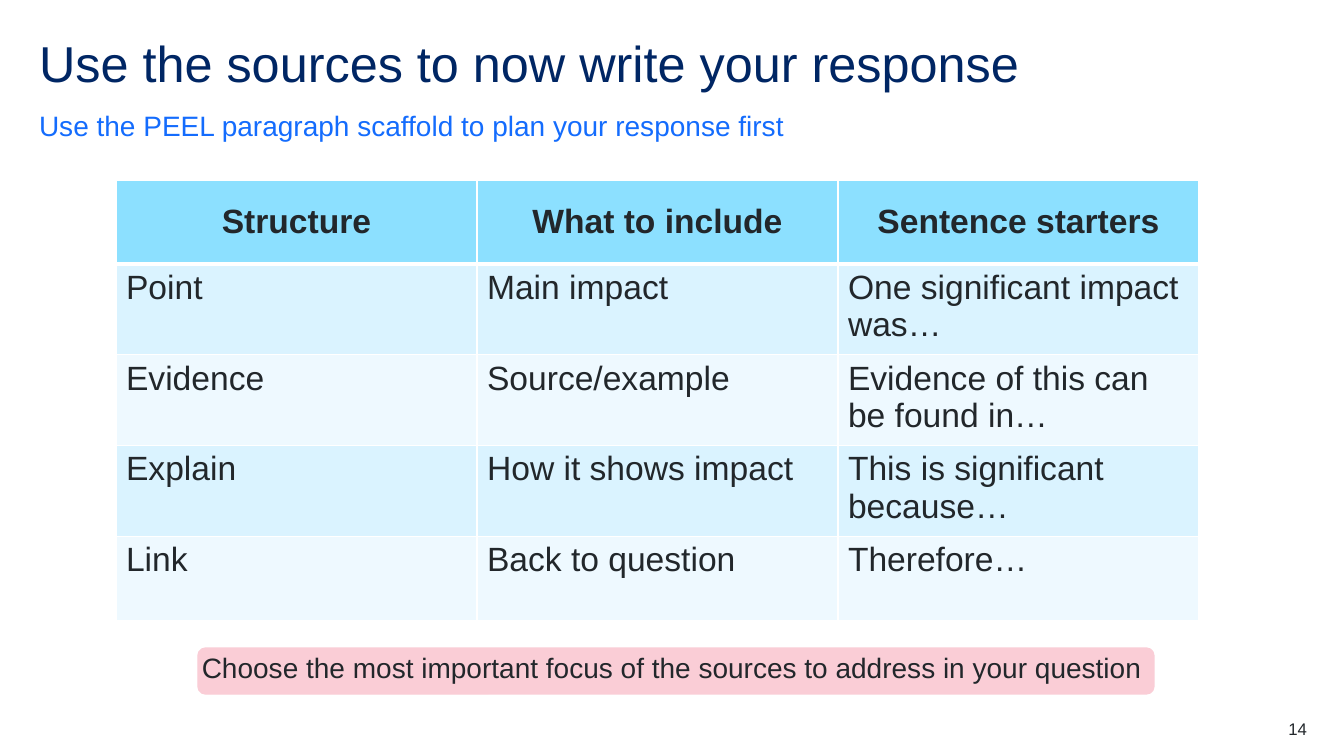
from lxml import etree
from pptx import Presentation
from pptx.dml.color import RGBColor
from pptx.enum.shapes import MSO_SHAPE
from pptx.enum.text import MSO_ANCHOR, PP_ALIGN
from pptx.oxml.ns import qn
from pptx.util import Emu, Pt

ROUND = MSO_SHAPE.ROUNDED_RECTANGLE
TOP, MIDDLE, BOTTOM = MSO_ANCHOR.TOP, MSO_ANCHOR.MIDDLE, MSO_ANCHOR.BOTTOM
LEFT, CENTER, RIGHT = PP_ALIGN.LEFT, PP_ALIGN.CENTER, PP_ALIGN.RIGHT
SCALE = 914400 / 100.8
COLORS = {
    "navy": "002664", "blue": "146CFD", "ink": "22272B", "pink": "FACDD6",
    "head": "8CE0FF", "odd": "DAF3FF", "even": "EEF9FF", "white": "FFFFFF",
}


def px(*sizes):
    return [Emu(round(size * SCALE)) for size in sizes]


def write(frame, text, size, color, align=LEFT, bold=False):
    para = frame.paragraphs[0]
    para.text = text
    para.alignment = align
    para.font.name = "Arial"
    para.font.size = Pt(size)
    para.font.bold = bold
    para.font.color.rgb = RGBColor.from_string(COLORS[color])
    return para


deck = Presentation()
deck.slide_width, deck.slide_height = px(1344, 756)
slide = deck.slides.add_slide(deck.slide_layouts[6])
shapes = slide.shapes

labels = [
    ("Use the sources to now write your response",
     (39, 39, 1266, 60), 36, "navy", LEFT, TOP, 0.9, 0),
    ("Use the PEEL paragraph scaffold to plan your response first",
     (39, 108, 1266, 34), 20, "blue", LEFT, BOTTOM, 1.5, 12),
    ("14", (1227, 719, 80, 20), 12, "ink", RIGHT, TOP, 1, 0),
]
for text, place, size, color, align, anchor, lines, after in labels:
    frame = shapes.add_textbox(*px(*place)).text_frame
    frame.word_wrap = True
    frame.vertical_anchor = anchor
    frame.margin_left = frame.margin_right = 0
    frame.margin_top = frame.margin_bottom = 0
    para = write(frame, text, size, color, align)
    para.line_spacing = lines
    para.space_after = Pt(after)

rows = [
    ("Structure", "What to include", "Sentence starters"),
    ("Point", "Main impact", "One significant impact was…"),
    ("Evidence", "Source/example", "Evidence of this can be found in…"),
    ("Explain", "How it shows impact", "This is significant because…"),
    ("Link", "Back to question", "Therefore…"),
]
table = shapes.add_table(len(rows), 3, *px(116, 180, 1083, 420)).table
for r, row in enumerate(rows):
    head = r == 0
    band = "head" if head else "odd" if r % 2 else "even"
    for c, text in enumerate(row):
        cell = table.cell(r, c)
        cell.fill.solid()
        cell.fill.fore_color.rgb = RGBColor.from_string(COLORS[band])
        cell.vertical_anchor = MIDDLE if head else TOP
        write(cell.text_frame, text, 24, "ink", CENTER if head else LEFT, head)
        props = cell._tc.get_or_add_tcPr()
        for i, side in enumerate(("lnL", "lnR", "lnT", "lnB")):
            thick = (r, side) in ((0, "lnB"), (1, "lnT"))
            line = etree.Element(qn("a:" + side), w=str(Pt(3 if thick else 1)))
            fill = etree.SubElement(line, qn("a:solidFill"))
            etree.SubElement(fill, qn("a:srgbClr"), val=COLORS["white"])
            props.insert(i, line)

prompt = shapes.add_shape(ROUND, *px(198, 648, 956, 46))
prompt.shadow.inherit = False
prompt.fill.solid()
prompt.fill.fore_color.rgb = RGBColor.from_string(COLORS["pink"])
prompt.line.color.rgb = RGBColor.from_string(COLORS["pink"])
prompt.line.width = Pt(1)
frame = prompt.text_frame
frame.word_wrap = False
frame.vertical_anchor = TOP
frame.margin_left = frame.margin_top = frame.margin_bottom = 0
frame.margin_right = px(8)[0]
write(frame, "Choose the most important focus of the sources to address in your question",
      20, "ink", CENTER)

deck.save("out.pptx")
